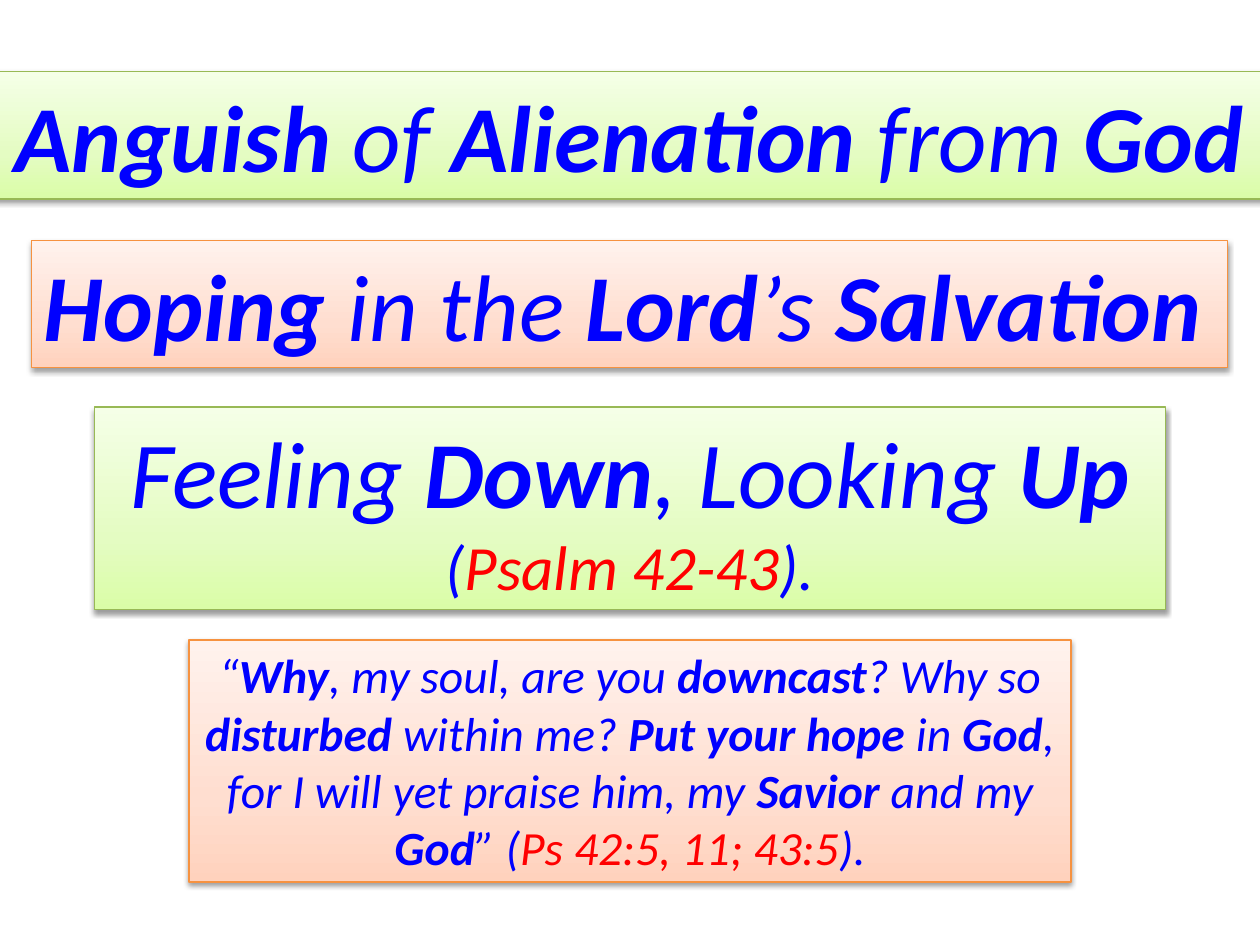
from copy import deepcopy
from dataclasses import dataclass

from lxml.etree import SubElement
from pptx import Presentation
from pptx.dml.color import RGBColor
from pptx.enum.shapes import MSO_SHAPE as Preset
from pptx.enum.text import MSO_ANCHOR as Anchor, MSO_AUTO_SIZE as AutoSize, PP_ALIGN as Align
from pptx.oxml.ns import qn
from pptx.util import Emu, Pt

EMU_PER_PX = 9144


def px(length):
    return Emu(length * EMU_PER_PX)


@dataclass(frozen=True)
class Palette:
    line: str
    stops: tuple


@dataclass(frozen=True)
class Theme:
    font: str = "Calibri"
    text: str = "0000FF"
    reference: str = "FF0000"
    headline: float = 54
    citation: float = 36
    verse: float = 27.2
    green: Palette = Palette("98B955", ("DAFDA7", "E4FCC2", "F5FFE7"))
    orange: Palette = Palette("F69240", ("FFD2BD", "FFDED0", "FFF2ED"))
    stop_positions: tuple = (0, 0.35, 1)


def write_text(shape, text, *, theme, sizes, align=Align.CENTER, anchor=Anchor.TOP,
               wrap=True, auto_size=AutoSize.NONE, space_before=0):
    """Asterisks enclose bold words and bars enclose scripture references."""
    frame = shape.text_frame
    frame.word_wrap = wrap
    frame.auto_size = auto_size
    frame.vertical_anchor = anchor
    paragraph = frame.paragraphs[0]
    paragraph.alignment = align
    paragraph.space_before = Pt(space_before)
    for number, (line, size) in enumerate(zip(text.split("\n"), sizes)):
        if number:
            paragraph.add_line_break()
        for bold_index, chunk in enumerate(line.split("*")):
            for reference_index, part in enumerate(chunk.split("|")):
                if not part:
                    continue
                run = paragraph.add_run()
                run.text = part
                font = run.font
                font.name = theme.font
                font.size = Pt(size)
                font.italic = True
                font.bold = bold_index % 2 == 1
                color = theme.reference if reference_index % 2 else theme.text
                font.color.rgb = RGBColor.from_string(color)


class SlideBuilder:
    def __init__(self, slide, theme):
        self.slide = slide
        self.theme = theme

    def panel_style(self, shape, palette):
        fill = shape.fill
        fill.gradient()
        fill.gradient_angle = 90
        stop_list = shape._element.spPr.find(qn("a:gradFill")).find(qn("a:gsLst"))
        stop_list.insert(1, deepcopy(stop_list[0]))
        for stop, position, color in zip(fill.gradient_stops, self.theme.stop_positions, palette.stops):
            stop.position = position
            stop.color.rgb = RGBColor.from_string(color)
        shape.line.color.rgb = RGBColor.from_string(palette.line)
        shape.line.width = Pt(0.75)
        self.drop_shadow(shape)

    def drop_shadow(self, shape):
        shape.shadow.inherit = False
        effects = shape._element.spPr.find(qn("a:effectLst"))
        shadow = SubElement(effects, qn("a:outerShdw"), blurRad=str(Pt(3.1)), dist=str(Pt(1.6)),
                            dir="5400000", rotWithShape="0")
        color = SubElement(shadow, qn("a:srgbClr"), val="000000")
        SubElement(color, qn("a:alpha"), val="38000")

    def title(self, text, box, palette, **text_format):
        shape = self.slide.shapes.title
        shape.left, shape.top, shape.width, shape.height = map(px, box)
        self.panel_style(shape, palette)
        write_text(shape, text, theme=self.theme, **text_format)

    def panel(self, text, box, palette, **text_format):
        shape = self.slide.shapes.add_shape(Preset.RECTANGLE, *map(px, box))
        self.panel_style(shape, palette)
        write_text(shape, text, theme=self.theme, **text_format)


def main():
    presentation = Presentation()
    presentation.slide_width, presentation.slide_height = px(1000), px(750)
    theme = Theme()
    builder = SlideBuilder(presentation.slides.add_slide(presentation.slide_layouts[5]), theme)

    builder.title("Feeling *Down*, Looking *Up*\n(|Psalm 42-43|).", (75, 323, 850, 161), theme.green,
                  sizes=(theme.headline, theme.citation), anchor=Anchor.MIDDLE)
    builder.panel("“*Why*, my soul, are you *downcast*? Why so *disturbed *within me? "
                  "*Put your hope *in *God*, for I will yet praise him, my *Savior *and my "
                  "*God*” (|Ps 42:5, 11; 43:5|).",
                  (150, 508, 700, 192), theme.orange, sizes=(theme.verse,), space_before=5.4)

    banner = {"sizes": (theme.headline,), "wrap": False, "auto_size": AutoSize.SHAPE_TO_FIT_TEXT}
    builder.panel("*Anguish* of *Alienation* from *God*", (-4, 57, 1006, 101), theme.green, **banner)
    builder.panel("*Hoping* in the *Lord*’s *Salvation*", (25, 191, 949, 101), theme.orange,
                  align=Align.LEFT, **banner)

    presentation.save("out.pptx")


if __name__ == "__main__":
    main()
